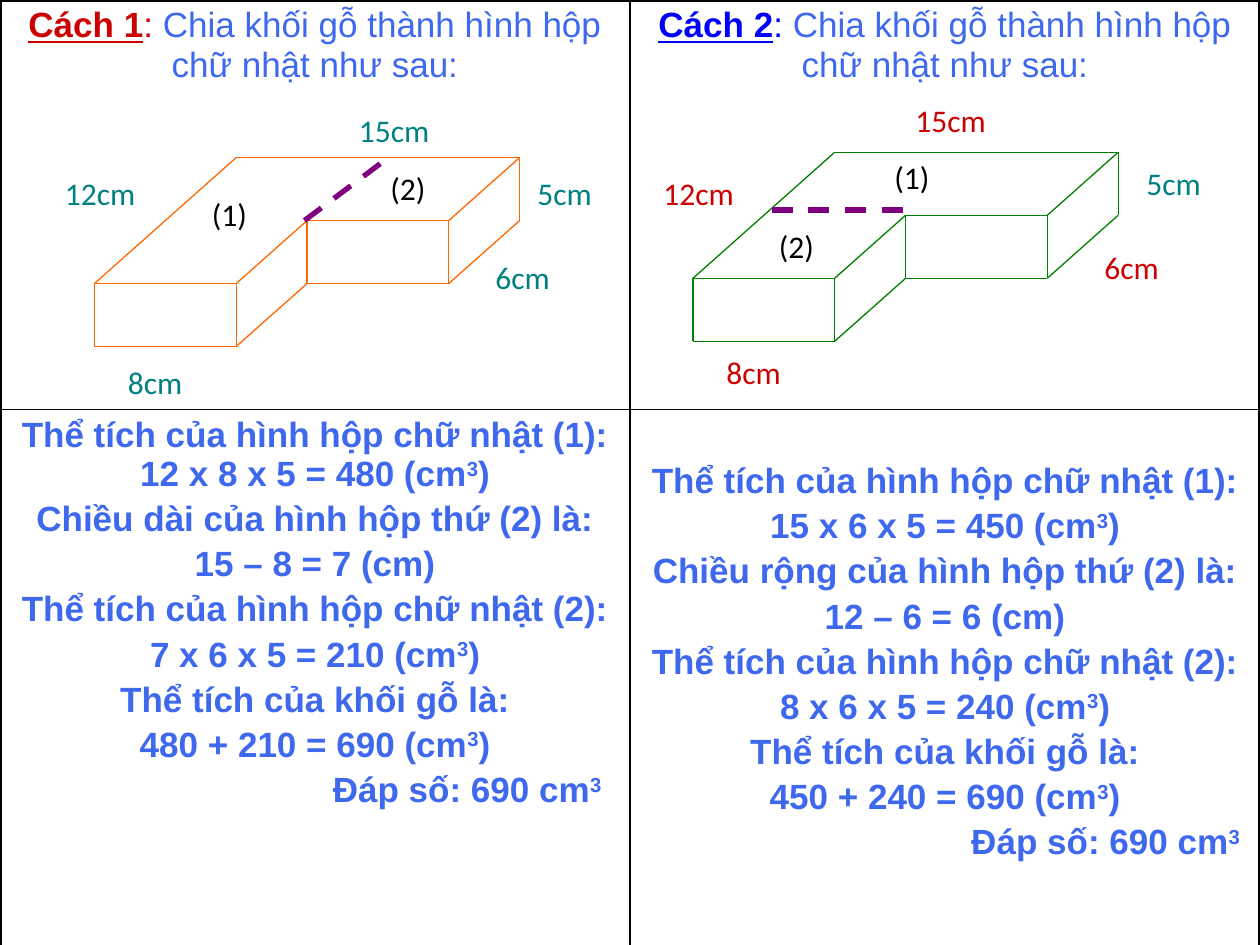
import pptx
import pptx.util
import pptx.dml.color
import pptx.enum.dml
import pptx.enum.shapes
import pptx.enum.text
from lxml import etree

Pt = pptx.util.Pt
RGB = pptx.dml.color.RGBColor.from_string
CENTER = pptx.enum.text.PP_ALIGN.CENTER
LEFT = pptx.enum.text.PP_ALIGN.LEFT

COLORS = {"text": "3E68EE", "red": "CC0000", "blue": "0000FF", "teal": "008080",
          "orange": "FF6600", "green": "008000", "purple": "800080", "black": "000000"}

prs = pptx.Presentation()
prs.slide_width = pptx.util.Inches(10)
prs.slide_height = pptx.util.Inches(7.5)
s = prs.slides.add_slide(prs.slide_layouts[6])
UNIT = prs.slide_width // 120  # the slide is a grid of 120 columns and 90 rows


def add_line(shapes, start, end, color, width):
    """Draw a straight line between two (column, row) points."""
    x1, y1, x2, y2 = (round(n * UNIT) for n in (*start, *end))
    c = shapes.add_connector(pptx.enum.shapes.MSO_CONNECTOR.STRAIGHT, x1, y1, x2, y2)
    c.line.color.rgb = RGB(COLORS[color])
    c.line.width = Pt(width)
    etree.SubElement(c._element.spPr, pptx.oxml.ns.qn("a:effectLst"))
    return c


def add_run(p, text, color):
    r = p.add_run()
    r.text = text
    r.font.color.rgb = RGB(COLORS[color])
    return r


# Table: a drawing above its solution, one column per method
table = s.shapes.add_table(2, 2, 0, 0, prs.slide_width, round(94.8 * UNIT)).table
table.first_row = table.horz_banding = False
for row, height in zip(table.rows, (39, 55.8)):
    row.height = round(height * UNIT)

for i in range(2):
    for j in range(2):
        cell = table.cell(i, j)
        cell.fill.background()
        tcPr = cell._tc.get_or_add_tcPr()
        outer = {"lnL": j == 0, "lnR": j == 1, "lnT": i == 0, "lnB": i == 1}
        for k, (side, thick) in enumerate(outer.items()):
            ln = etree.Element(pptx.oxml.ns.qn("a:" + side), w=str(Pt(2.25 if thick else 1)))
            fill = etree.SubElement(ln, pptx.oxml.ns.qn("a:solidFill"))
            etree.SubElement(fill, pptx.oxml.ns.qn("a:srgbClr"), val=COLORS["black"])
            tcPr.insert(k, ln)

for j, color in enumerate(("red", "blue")):
    p = table.cell(0, j).text_frame.paragraphs[0]
    p.alignment = CENTER
    p.font.name, p.font.size = "Arial", Pt(20)
    r = add_run(p, f"Cách {j + 1}", color)
    r.font.bold = r.font.underline = True
    add_run(p, ": ", color)
    add_run(p, "Chia khối gỗ thành hình hộp chữ nhật như sau:", "text")

solutions = [
    ["Thể tích của hình hộp chữ nhật (1): 12 x 8 x 5 = 480 (cm³)",
     "Chiều dài của hình hộp thứ (2) là:", "15 – 8 = 7 (cm)",
     "Thể tích của hình hộp chữ nhật (2):", "7 x 6 x 5 = 210 (cm³)",
     "Thể tích của khối gỗ là:", "480 + 210 = 690 (cm³)", "Đáp số: 690 cm³"],
    ["Thể tích của hình hộp chữ nhật (1):", "15 x 6 x 5 = 450 (cm³)",
     "Chiều rộng của hình hộp thứ (2) là:", "12 – 6 = 6 (cm)",
     "Thể tích của hình hộp chữ nhật (2):", "8 x 6 x 5 = 240 (cm³)",
     "Thể tích của khối gỗ là:", "450 + 240 = 690 (cm³)", "Đáp số: 690 cm³"],
]
top_margins = (0.6, 5)
answer_indents = (30.5, 31.3)
for j, lines in enumerate(solutions):
    cell = table.cell(1, j)
    cell.margin_top = round(top_margins[j] * UNIT)
    tf = cell.text_frame
    for n, line in enumerate(lines):
        p = tf.add_paragraph() if n else tf.paragraphs[0]
        p.alignment = CENTER
        p.font.name, p.font.size, p.font.bold = "Arial", Pt(20), True
        if n:
            p.space_before = Pt(3.5)
        if line == lines[-1]:
            p.alignment = LEFT
            p._p.get_or_add_pPr().set("marL", str(round(answer_indents[j] * UNIT)))
        before, cubed, after = line.partition("³")
        add_run(p, before, "text")
        if cubed:
            add_run(p, "3", "text").font._element.set("baseline", "30000")
        if after:
            add_run(p, after, "text")

# Wooden block: corners of the top face, and the same corners one step lower
TOP = {"A": (2, 0), "B": (6, 0), "C": (5, 1), "D": (3, 1), "E": (2, 2), "F": (0, 2)}
corners = TOP | {name.lower(): (x, y + 1) for name, (x, y) in TOP.items()}
EDGES = "AB BC CD DE EF FA Bb Cc Dd Ee Ff bc cd de ef".split()
STEP_X, STEP_Y = 6.75, 6
for left, top, color in ((9, 15, "orange"), (66, 14.5, "green")):
    block = s.shapes.add_group_shape()
    for edge in EDGES:
        start, end = ((left + x * STEP_X, top + y * STEP_Y)
                      for x, y in (corners[name] for name in edge))
        add_line(block.shapes, start, end, color, 0.75)

for start, end in (((29, 21), (37, 15)), ((86, 20), (73, 20))):
    cut = add_line(s.shapes, start, end, "purple", 3)
    cut.line.dash_style = pptx.enum.dml.MSO_LINE.DASH

# Labels: text, column, row, colour
labels = [
    ("15cm", 33, 10, "teal"), ("5cm", 50, 16, "teal"), ("6cm", 46, 24, "teal"),
    ("8cm", 11, 34, "teal"), ("12cm", 5, 16, "teal"),
    ("15cm", 86, 9, "red"), ("5cm", 108, 15, "teal"), ("6cm", 104, 23, "red"),
    ("8cm", 68, 33, "red"), ("12cm", 62, 16, "red"),
    ("(1)", 19, 18, "black"), ("(2)", 36, 15.5, "black"),
    ("(2)", 73, 21, "black"), ("(1)", 84, 14.5, "black"),
]
WIDTHS = {"(1)": 6.1, "(2)": 6.1, "15cm": 9.7, "12cm": 9.7}
for text, col, row, color in labels:
    width = WIDTHS.get(text, 8)
    sp = s.shapes.add_textbox(*(round(n * UNIT) for n in (col, row, width, 4.8)))
    sp.text_frame.word_wrap = True
    p = sp.text_frame.paragraphs[0]
    p.font.name, p.font.size = "Calibri", Pt(18)
    add_run(p, text, color)

prs.save("out.pptx")
